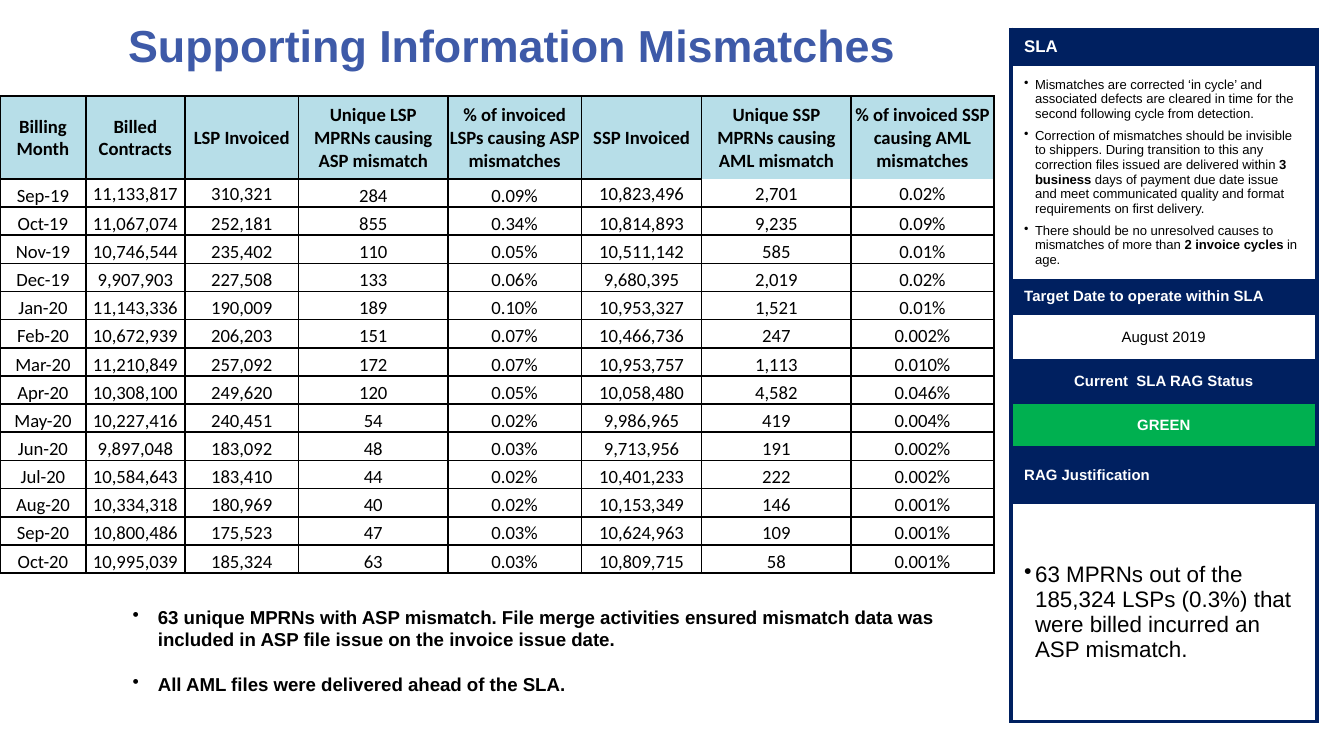
"""Build the slide on mismatches in billing and their SLA status."""
from dataclasses import dataclass
from typing import Any, NamedTuple

from lxml.etree import SubElement as Sub
from pptx import Presentation
from pptx.dml.color import RGBColor as Rgb
from pptx.enum.text import MSO_ANCHOR as Anchor, PP_ALIGN as Align
from pptx.oxml import parse_xml
from pptx.oxml.ns import nsdecls, qn
from pptx.util import Pt


@dataclass(frozen=True)
class Theme:
    title: str = "3E5AA8"
    navy: str = "002060"
    green: str = "00B050"
    pale: str = "B7DEE8"
    black: str = "000000"
    white: str = "FFFFFF"
    sans: str = "Arial"
    grid: str = "Calibri"
    huge: float = 24
    large: float = 12
    body: float = 10
    head: float = 9
    label: float = 8
    small: float = 7


T = Theme()


class Style(NamedTuple):
    size: float
    ink: str = T.black
    bold: bool = False
    align: Any = Align.LEFT
    face: str = T.sans
    hang: float = 0
    before: float = 0
    after: float = 0


class Panel(NamedTuple):
    high: float
    lines: list[str]
    style: Style
    fill: str | None = None


class Edge(NamedTuple):
    ink: str
    wide: float


LABEL = Style(T.label, T.white, True)
MID = LABEL._replace(align=Align.CENTER)
POINT = Style(T.small, hang=5.8, after=4)
NOTE = Style(T.body, bold=True, hang=13.5, before=12)
CELL = Style(T.body, align=Align.CENTER, face=T.grid)

PANELS = [
    Panel(18.5, ["SLA"], LABEL._replace(size=T.head), T.navy),
    Panel(107.5, [
        "Mismatches are corrected ‘in cycle’ and associated defects are cleared in time "
        "for the second following cycle from detection.",
        "Correction of mismatches should be invisible to shippers. During transition to this "
        "any correction files issued are delivered within *3 business* days of payment due date "
        "issue and meet communicated quality and format requirements on first delivery.",
        "There should be no unresolved causes to mismatches of more than "
        "*2 invoice cycles* in age."], POINT),
    Panel(17.5, ["Target Date to operate within SLA"], LABEL, T.navy),
    Panel(25.5, ["August 2019"], MID._replace(ink=T.black, bold=False)),
    Panel(22.5, ["Current  SLA RAG Status"], MID, T.navy),
    Panel(24.5, ["GREEN"], MID, T.green),
    Panel(29, ["RAG Justification"], LABEL, T.navy),
    Panel(117.5, ["63 MPRNs out of the 185,324 LSPs (0.3%) that were billed incurred an "
                  "ASP mismatch."], POINT._replace(size=T.large)),
]
NOTES = [
    "63 unique MPRNs with ASP mismatch. File merge activities ensured mismatch data was "
    "included in ASP file issue on the invoice issue date.",
    "All AML files were delivered ahead of the SLA.",
]
WIDTHS = [46, 53, 61, 80, 71.5, 64.5, 80, 76.5]
HEADS = ["Billing\nMonth", "Billed\nContracts", "LSP Invoiced",
         "Unique LSP MPRNs causing ASP mismatch", "% of invoiced LSPs causing ASP mismatches",
         "SSP Invoiced", "Unique SSP MPRNs causing AML mismatch",
         "% of invoiced SSP causing AML mismatches"]
MONTHS = [
    "Sep-19 11,133,817 310,321 284 0.09% 10,823,496 2,701 0.02%",
    "Oct-19 11,067,074 252,181 855 0.34% 10,814,893 9,235 0.09%",
    "Nov-19 10,746,544 235,402 110 0.05% 10,511,142 585 0.01%",
    "Dec-19 9,907,903 227,508 133 0.06% 9,680,395 2,019 0.02%",
    "Jan-20 11,143,336 190,009 189 0.10% 10,953,327 1,521 0.01%",
    "Feb-20 10,672,939 206,203 151 0.07% 10,466,736 247 0.002%",
    "Mar-20 11,210,849 257,092 172 0.07% 10,953,757 1,113 0.010%",
    "Apr-20 10,308,100 249,620 120 0.05% 10,058,480 4,582 0.046%",
    "May-20 10,227,416 240,451 54 0.02% 9,986,965 419 0.004%",
    "Jun-20 9,897,048 183,092 48 0.03% 9,713,956 191 0.002%",
    "Jul-20 10,584,643 183,410 44 0.02% 10,401,233 222 0.002%",
    "Aug-20 10,334,318 180,969 40 0.02% 10,153,349 146 0.001%",
    "Sep-20 10,800,486 175,523 47 0.03% 10,624,963 109 0.001%",
    "Oct-20 10,995,039 185,324 63 0.03% 10,809,715 58 0.001%",
]


def put(item: Any, **vals: Any) -> None:
    """Set each named value on the item."""
    for name, val in vals.items():
        setattr(item, name, val)


def write(frame: Any, lines: list[str], style: Style) -> None:
    """Fill a text frame, with starred spans in bold."""
    for i, line in enumerate(lines):
        para = frame.add_paragraph() if i else frame.paragraphs[0]
        if style.hang:
            props = para._p.get_or_add_pPr()
            props.set("marL", str(Pt(style.hang)))
            props.set("indent", str(-Pt(style.hang)))
            Sub(props, qn("a:buChar")).set("char", "•")
        put(para, alignment=style.align, space_before=Pt(style.before if i else 0),
            space_after=Pt(style.after))
        for j, span in enumerate(line.split("*")):
            for k, part in enumerate(span.split("\n")):
                if k:
                    para.add_line_break()
                run = para.add_run()
                run.text = part
                put(run.font, name=style.face, size=Pt(style.size),
                    bold=style.bold or j % 2 == 1)
                run.font.color.rgb = Rgb.from_string(style.ink)


def box(slide: Any, rect: tuple, lines: list[str], style: Style, anchor: Any) -> None:
    """Add a wrapped text box."""
    frame = slide.shapes.add_textbox(*map(Pt, rect)).text_frame
    put(frame, word_wrap=True, vertical_anchor=anchor)
    write(frame, lines, style)


def grid(slide: Any, left: float, top: float, wides: list, highs: list) -> Any:
    """Add a plain table with the given columns and rows."""
    table = slide.shapes.add_table(len(highs), len(wides), Pt(left), Pt(top),
                                   Pt(sum(wides)), Pt(sum(highs))).table
    put(table, first_row=False, horz_banding=False)
    for col, wide in zip(table.columns, wides):
        col.width = Pt(wide)
    for row, high in zip(table.rows, highs):
        row.height = Pt(high)
    return table


def dress(cell: Any, fill: str | None, edge: Edge, bare: str = "") -> None:
    """Fill a cell and rule its sides, leaving out the bare one."""
    if fill:
        cell.fill.solid()
        cell.fill.fore_color.rgb = Rgb.from_string(fill)
    else:
        cell.fill.background()
    for i, side in enumerate("LRTB"):
        paint = ("<a:noFill/>" if side == bare else
                 f'<a:solidFill><a:srgbClr val="{edge.ink}"/></a:solidFill>')
        cell._tc.get_or_add_tcPr().insert(i, parse_xml(
            f'<a:ln{side} {nsdecls("a")} w="{Pt(edge.wide)}">{paint}</a:ln{side}>'))


def status(slide: Any) -> None:
    """Draw the SLA column."""
    table = grid(slide, 541.5, 15.8, [164], [panel.high for panel in PANELS])
    for i, panel in enumerate(PANELS):
        cell = table.cell(i, 0)
        cell.vertical_anchor = Anchor.MIDDLE
        dress(cell, panel.fill, Edge(T.navy, 2.25))
        write(cell.text_frame, panel.lines, panel.style)


def months(slide: Any) -> None:
    """Draw the table of monthly counts."""
    rows = [HEADS, *(line.split() for line in MONTHS)]
    table = grid(slide, 0, 51.4, WIDTHS, [44.5] + [15.1] * len(MONTHS))
    for i, row in enumerate(rows):
        for j, text in enumerate(row):
            cell = table.cell(i, j)
            mid = i == 0 or (i == 1 and j not in (0, 3, 4))
            put(cell, margin_left=Pt(0.7), margin_right=Pt(0.7), margin_top=Pt(0.7),
                margin_bottom=0, vertical_anchor=Anchor.MIDDLE if mid else Anchor.BOTTOM)
            bare = {0: "B", 1: "T"}.get(i, "") if j > 5 else ""
            dress(cell, None if i else T.pale, Edge(T.black, 1), bare)
            write(cell.text_frame, [text], CELL._replace(bold=i == 0))


def main() -> None:
    """Build and save the deck."""
    deck = Presentation()
    put(deck, slide_width=Pt(720), slide_height=Pt(405))
    slide = deck.slides.add_slide(deck.slide_layouts[6])
    box(slide, (15, -1.5, 518, 50.5), ["Supporting Information Mismatches"],
        Style(T.huge, T.title, True, Align.CENTER), Anchor.MIDDLE)
    status(slide)
    box(slide, (64, 321, 464.5, 62.5), NOTES, NOTE, Anchor.TOP)
    months(slide)
    deck.save("out.pptx")


if __name__ == "__main__":
    main()
